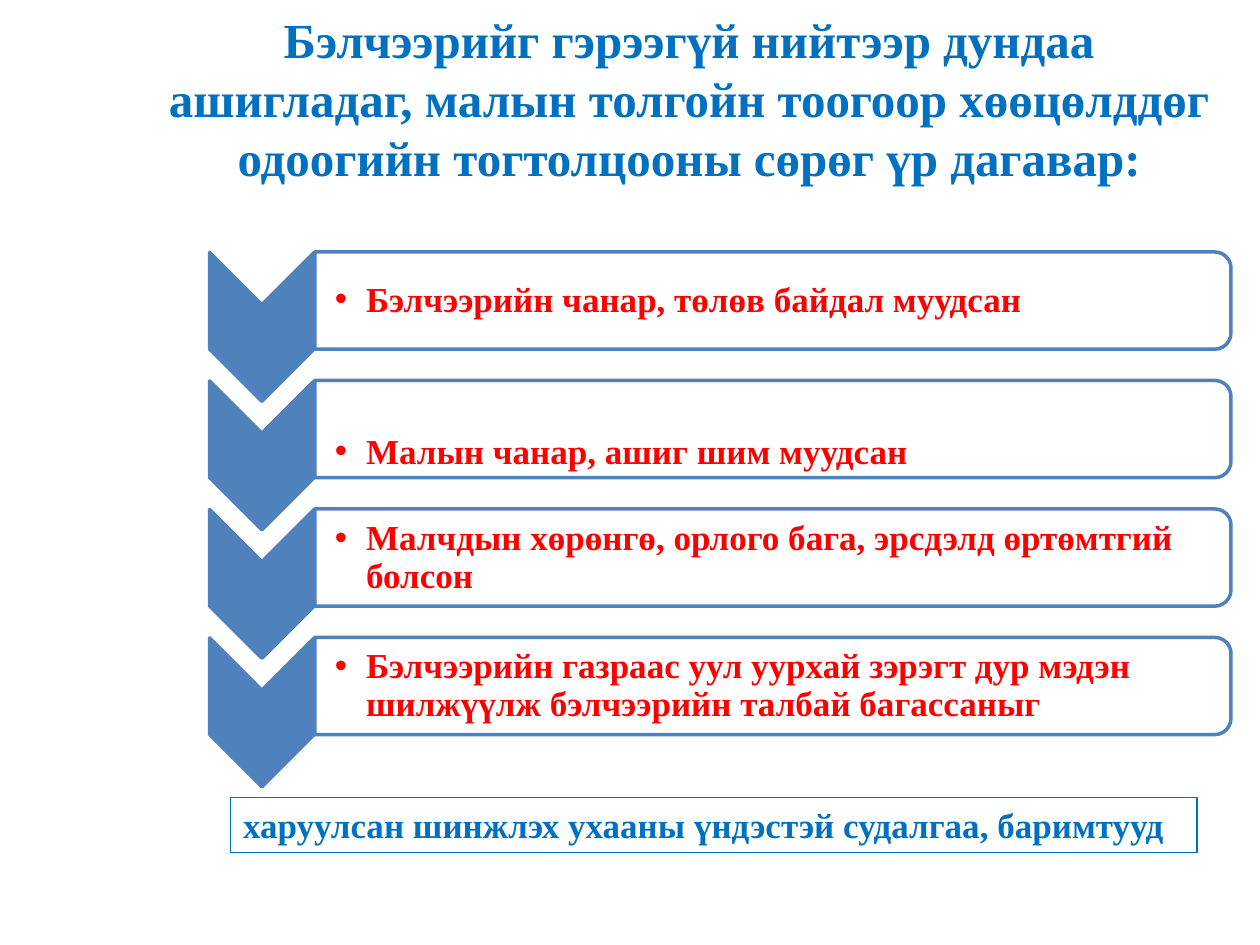
"""Build a slide listing the harms of shared, uncontracted pasture use."""
import dataclasses
import typing

import lxml.etree
import pptx
import pptx.dml.color
import pptx.enum.shapes
import pptx.enum.text
import pptx.oxml.ns
import pptx.util

Cm = pptx.util.Cm
Pt = pptx.util.Pt
SHAPES = pptx.enum.shapes.MSO_SHAPE
ALIGN = pptx.enum.text.PP_ALIGN
ANCHOR = pptx.enum.text.MSO_ANCHOR


@dataclasses.dataclass(frozen=True)
class Theme:
    font: str = "Times New Roman"
    heading: str = "0070C0"
    effect: str = "FF0000"
    accent: str = "4F81BD"
    panel: str = "FFFFFF"
    heading_size: int = 28
    text_size: int = 20
    border: float = 2
    thin_border: float = 0.75


@dataclasses.dataclass(frozen=True)
class Effect:
    text: str
    inset_top: float = 0.03


THEME = Theme()
ROW_PITCH = 2.59
EFFECTS = (
    Effect("Бэлчээрийн чанар, төлөв байдал муудсан"),
    Effect("Малын чанар, ашиг шим муудсан", inset_top=0.97),
    Effect("Малчдын хөрөнгө, орлого бага, эрсдэлд өртөмтгий болсон"),
    Effect("Бэлчээрийн газраас уул уурхай зэрэгт дур мэдэн шилжүүлж бэлчээрийн талбай багассаныг"),
)


def rgb(value: str) -> pptx.dml.color.RGBColor:
    """Return the colour for a hex value."""
    return pptx.dml.color.RGBColor.from_string(value)


def add_child(parent: typing.Any, tag: str, **attributes: str) -> None:
    """Append a DrawingML element to its parent."""
    lxml.etree.SubElement(parent, pptx.oxml.ns.qn(tag), attributes)


def write_text(frame: typing.Any, text: str, *, color: str, size: float = THEME.text_size,
               align: ALIGN = ALIGN.LEFT, anchor: ANCHOR = ANCHOR.MIDDLE,
               spacing: float | None = None, bullet: bool = False) -> None:
    """Fill a text frame with one formatted bold paragraph."""
    frame.word_wrap = True
    frame.auto_size = pptx.enum.text.MSO_AUTO_SIZE.NONE
    frame.vertical_anchor = anchor
    paragraph = frame.paragraphs[0]
    paragraph.alignment = align
    if spacing:
        paragraph.line_spacing = spacing
    run = paragraph.add_run()
    run.text = text
    run.font.name = THEME.font
    run.font.size = Pt(size)
    run.font.bold = True
    run.font.color.rgb = rgb(color)
    if bullet:
        properties = paragraph._p.get_or_add_pPr()
        properties.set("marL", str(Cm(0.63)))
        properties.set("indent", str(Cm(-0.63)))
        add_child(properties, "a:buFont", typeface="Arial")
        add_child(properties, "a:buChar", char="•")


def add_box(slide: typing.Any, kind: SHAPES, left: float, top: float, width: float,
            height: float, *, line: str, line_width: float, fill: str | None = None) -> typing.Any:
    """Add a preset shape without a shadow, measured in centimetres."""
    box = slide.shapes.add_shape(kind, Cm(left), Cm(top), Cm(width), Cm(height))
    box.shadow.inherit = False
    if fill:
        box.fill.solid()
        box.fill.fore_color.rgb = rgb(fill)
    else:
        box.fill.background()
    box.line.color.rgb = rgb(line)
    box.line.width = Pt(line_width)
    return box


def add_turned(slide: typing.Any, kind: SHAPES, center_x: float, center_y: float,
               width: float, height: float, fill: str) -> typing.Any:
    """Add a shape turned a quarter clockwise about its centre."""
    turned = add_box(slide, kind, center_x - width / 2, center_y - height / 2, width, height,
                     line=THEME.accent, line_width=THEME.border, fill=fill)
    turned.rotation = 90
    add_child(turned.line._get_or_add_ln(), "a:round")
    return turned


def add_effect(slide: typing.Any, effect: Effect, offset: float) -> None:
    """Draw one row: chevron, panel and bulleted label."""
    add_turned(slide, SHAPES.CHEVRON, 5.28, 6.59 + offset, 3, 2.11, THEME.accent)
    panel = add_turned(slide, SHAPES.ROUND_2_SAME_RECTANGLE, 15.58, 6.06 + offset,
                       1.96, 18.47, THEME.panel)
    add_child(panel.fill._xPr.solidFill[0], "a:alpha", val="90000")
    label = slide.shapes.add_textbox(Cm(6.35), Cm(5.18 + offset), Cm(18.39), Cm(1.78))
    frame = label.text_frame
    frame.margin_left = Cm(0.4)
    frame.margin_right = frame.margin_bottom = Cm(0.03)
    frame.margin_top = Cm(effect.inset_top)
    write_text(frame, effect.text, color=THEME.effect, spacing=0.9, bullet=True)


def main() -> None:
    """Build and save the slide."""
    presentation = pptx.Presentation()
    presentation.slide_width = Cm(25.4)
    presentation.slide_height = Cm(19.05)
    slide = presentation.slides.add_slide(presentation.slide_layouts[5])

    heading = slide.shapes.title
    heading.left, heading.top = Cm(2.97), Cm(0)
    heading.width, heading.height = Cm(21.84), Cm(3.94)
    write_text(heading.text_frame,
               "Бэлчээрийг гэрээгүй нийтээр дундаа ашигладаг, малын толгойн тоогоор "
               "хөөцөлддөг одоогийн тогтолцооны сөрөг үр дагавар:",
               color=THEME.heading, size=THEME.heading_size, align=ALIGN.CENTER)

    for row, effect in enumerate(EFFECTS):
        add_effect(slide, effect, row * ROW_PITCH)

    evidence = add_box(slide, SHAPES.RECTANGLE, 4.65, 16.08, 19.48, 1.11,
                       line=THEME.heading, line_width=THEME.thin_border)
    write_text(evidence.text_frame, "харуулсан шинжлэх ухааны үндэстэй судалгаа, баримтууд",
               color=THEME.heading, anchor=ANCHOR.TOP)
    presentation.save("out.pptx")


if __name__ == "__main__":
    main()
